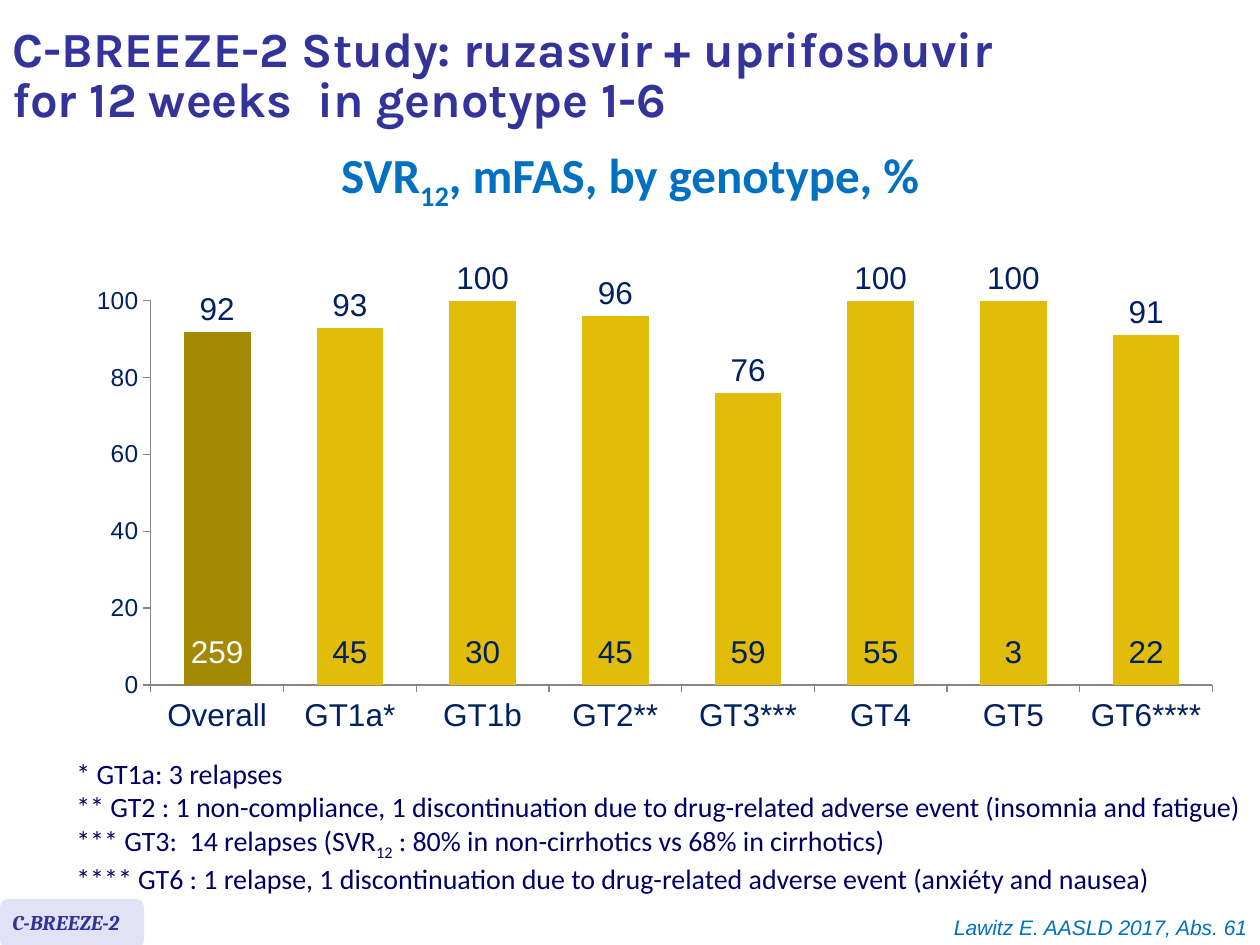
from lxml import etree
from pptx import Presentation
from pptx.chart.data import CategoryChartData
from pptx.dml.color import RGBColor
from pptx.enum.chart import XL_CHART_TYPE, XL_LABEL_POSITION, XL_TICK_MARK
from pptx.enum.shapes import MSO_SHAPE
from pptx.enum.text import MSO_ANCHOR, PP_ALIGN
from pptx.oxml import parse_xml
from pptx.oxml.ns import nsdecls, qn
from pptx.util import Emu, Pt

PX = 914400 / 126
NAVY, BLUE, INDIGO = "002060", "0070C0", "333399"
GOLD, DARK_GOLD, AXIS_GREY = "E1BC08", "A38904", "868686"

GENOTYPES = ["Overall", "GT1a*", "GT1b", "GT2**", "GT3***", "GT4", "GT5", "GT6****"]
RESPONSES = [92, 93, 100, 96, 76, 100, 100, 91]
PATIENTS = [259, 45, 30, 45, 59, 55, 3, 22]
# Inner plot area as fractions of the chart box
PLOT = {"x": 0.064, "y": 0.126, "w": 0.92, "h": 0.746}

# Each paragraph is a list of runs; a run marked True is a subscript
FOOTNOTES = [
    [("* GT1a: 3 relapses", False)],
    [("** GT2 : 1 non-compliance, 1 discontinuation due to drug-related "
      "adverse event (insomnia and fatigue)", False)],
    [("*** GT3:  14 relapses (SVR", False), ("12", True),
     (" : 80% in non-cirrhotics vs 68% in cirrhotics)", False)],
    [("**** GT6 : 1 relapse, 1 discontinuation due to drug-related "
      "adverse event (anxiéty and nausea)", False)],
]


def px(length):
    return Emu(round(length * PX))


def color(hex_string):
    return RGBColor.from_string(hex_string)


def style_font(font, size, name, hex_string, bold=False, italic=False):
    font.size, font.name = Pt(size), name
    font.bold, font.italic = bold, italic
    font.color.rgb = color(hex_string)


def add_text(page, box, paragraphs, size, name, hex_string, bold=False, italic=False,
             align=PP_ALIGN.LEFT, spacing=None, anchor=MSO_ANCHOR.TOP, wrap=True):
    frame = page.shapes.add_textbox(*map(px, box)).text_frame
    frame.word_wrap = wrap
    frame.vertical_anchor = anchor
    for index, runs in enumerate(paragraphs):
        para = frame.add_paragraph() if index else frame.paragraphs[0]
        para.alignment = align
        para.line_spacing = spacing
        for text, subscript in runs:
            span = para.add_run()
            span.text = text
            style_font(span.font, size, name, hex_string, bold, italic)
            if subscript:
                span.font._element.set("baseline", "-25000")


def add_headings(page, box):
    left, top, width, _ = box
    title = "C-BREEZE-2 Study: ruzasvir + uprifosbuvir for 12 weeks  in genotype 1-6"
    add_text(page, (left, top + 10, 1047, 135), [[(title, False)]], 28, "Karla", INDIGO,
             bold=True, spacing=0.85, anchor=MSO_ANCHOR.MIDDLE)
    subtitle = [("SVR", False), ("12", True), (", mFAS, by genotype, %", False)]
    add_text(page, (left + 15, top + 179, width - 30, 45), [subtitle], 28, "Calibri", BLUE,
             bold=True, align=PP_ALIGN.CENTER, spacing=Pt(15.2))


def set_plot_area(chart):
    plot_area = chart._chartSpace.find(".//" + qn("c:plotArea"))
    for old in plot_area.findall(qn("c:layout")):
        plot_area.remove(old)
    layout = parse_xml(f"<c:layout {nsdecls('c')}><c:manualLayout/></c:layout>")
    settings = [("layoutTarget", "inner"), ("xMode", "edge"), ("yMode", "edge"), *PLOT.items()]
    for tag, value in settings:
        etree.SubElement(layout[0], qn("c:" + tag)).set("val", str(value))
    plot_area.insert(0, layout)


def style_axis(axis, size):
    axis.has_major_gridlines = False
    axis.major_tick_mark = XL_TICK_MARK.OUTSIDE
    axis.minor_tick_mark = XL_TICK_MARK.NONE
    axis.format.line.color.rgb = color(AXIS_GREY)
    axis.format.line.width = Pt(0.75)
    style_font(axis.tick_labels.font, size, "Arial", NAVY)


def add_response_chart(page, box):
    data = CategoryChartData()
    data.categories = GENOTYPES
    data.add_series("Series 1", RESPONSES)
    chart = page.shapes.add_chart(XL_CHART_TYPE.COLUMN_CLUSTERED, *map(px, box), data).chart
    chart.has_legend = chart.has_title = False
    style_font(chart.font, 18, "Arial", NAVY)
    set_plot_area(chart)

    style_axis(chart.category_axis, 18)
    values = chart.value_axis
    style_axis(values, 14)
    values.minimum_scale, values.maximum_scale, values.major_unit = 0, 100, 20

    plot = chart.plots[0]
    plot.gap_width, plot.vary_by_categories = 99, False
    bars = plot.series[0]
    for part, fill in ((bars, GOLD), (bars.points[0], DARK_GOLD)):
        part.format.fill.solid()
        part.format.fill.fore_color.rgb = color(fill)
    labels = bars.data_labels
    labels.show_value = True
    labels.position = XL_LABEL_POSITION.OUTSIDE_END
    style_font(labels.font, 18, "Arial", NAVY)

    # Patient counts at the foot of the bars
    left, top, width, height = box
    step = width * PLOT["w"] / len(PATIENTS)
    for index, count in enumerate(PATIENTS):
        cell = (left + width * PLOT["x"] + index * step, top + height - 125, step, 50)
        add_text(page, cell, [[(str(count), False)]], 18, "Arial",
                 NAVY if index else "FFFFFF", align=PP_ALIGN.CENTER)


def add_footer(page, box):
    left, top, width, height = box
    # Study badge
    badge = page.shapes.add_shape(MSO_SHAPE.ROUNDED_RECTANGLE,
                                  *map(px, (left, top, 144, height)))
    badge.shadow.inherit = False
    badge.fill.solid()
    badge.fill.fore_color.rgb = color("E2E2F6")
    badge.line.fill.background()
    add_text(page, (left, top + 4, 144, 38), [[("C-BREEZE-2", False)]], 12, "Cambria", INDIGO,
             bold=True, italic=True)
    # Citation
    add_text(page, (left + width - 927, top + 9, 927, 38),
             [[("Lawitz E. AASLD 2017, Abs. 61", False)]], 12, "Arial", BLUE,
             italic=True, align=PP_ALIGN.RIGHT)


def main():
    deck = Presentation()
    deck.slide_width, deck.slide_height = px(1260), px(945)
    page = deck.slides.add_slide(deck.slide_layouts[6])
    add_headings(page, (0, 0, 1260, 224))
    add_response_chart(page, (77, 236, 1154, 515))
    add_text(page, (64, 750, 1196, 149), FOOTNOTES, 16, "Calibri", "000066")
    add_footer(page, (0, 899, 1260, 49))
    deck.save("out.pptx")


if __name__ == "__main__":
    main()
